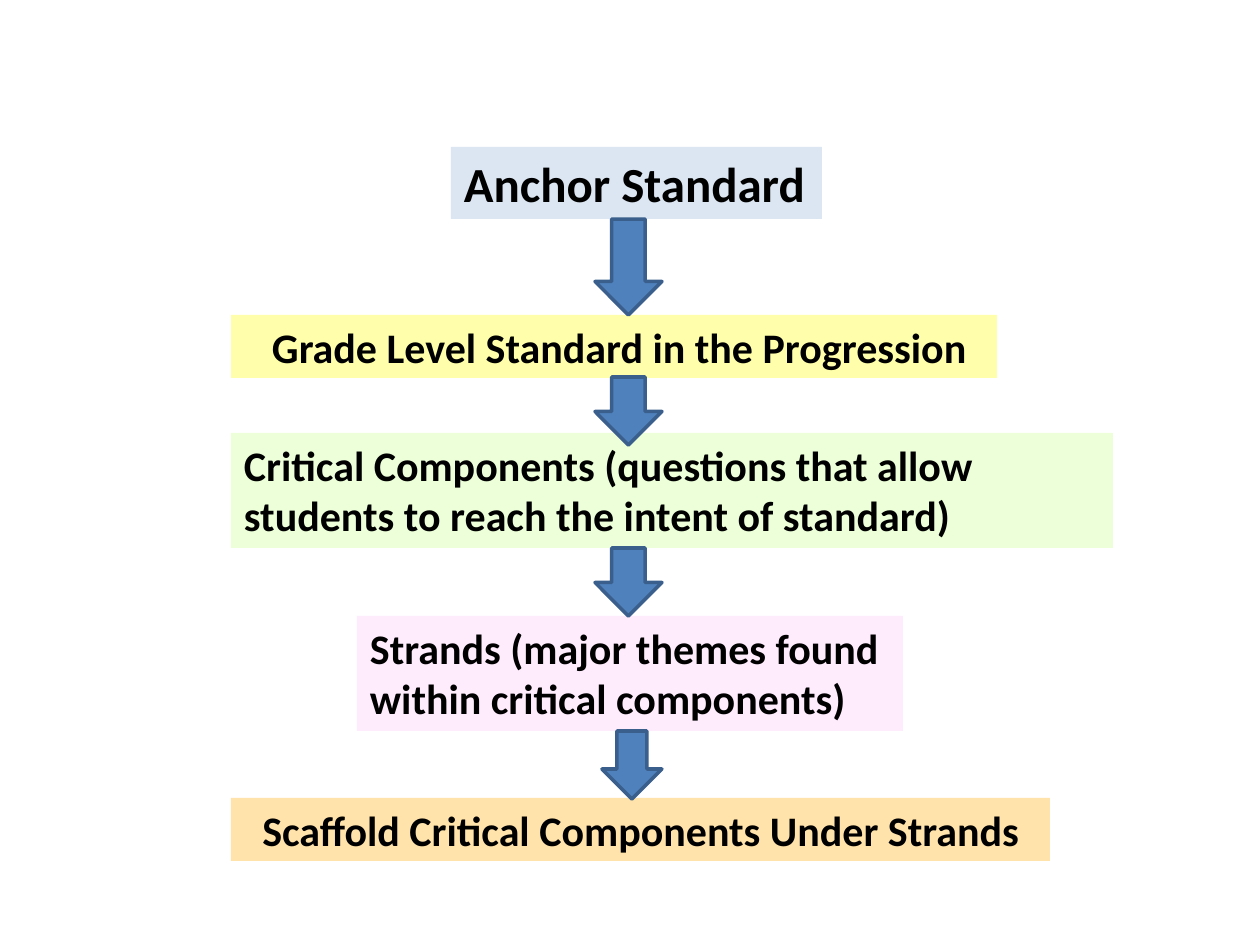
from pptx import Presentation
from pptx.dml.color import RGBColor
from pptx.enum.shapes import MSO_SHAPE as Shape
from pptx.enum.text import MSO_AUTO_SIZE as AutoSize, PP_ALIGN as Align
from pptx.util import Emu, Pt

PX = 914400 // 126
BLANK_LAYOUT = 6
INSET = 13

# paragraphs, (left, top, width, height), fill, text size, alignment, left inset
STEPS = [
    (["Anchor Standard"], (451, 147, 371, 72), "DCE6F2", 28, Align.LEFT, INSET),
    (["Grade Level Standard in the Progression"],
     (231, 315, 766, 63), "FFFFAB", 24, Align.LEFT, 41),
    (["Critical Components (questions that allow students to reach the intent of standard)"],
     (231, 433, 882, 115), "ECFFD9", 24, Align.LEFT, INSET),
    (["Strands (major themes found", "within critical components)"],
     (357, 616, 546, 115), "FEECFC", 24, Align.LEFT, INSET),
    (["Scaffold Critical Components Under Strands"],
     (231, 798, 819, 63), "FFE3AB", 24, Align.CENTER, INSET),
]
ARROW_RIGHT = 662
ARROWS = [(219, 67, 96), (377, 67, 68), (548, 67, 68), (731, 60, 68)]  # top, width, height


def px(*lengths):
    return [Emu(length * PX) for length in lengths]


def color(hex_text):
    return RGBColor.from_string(hex_text)


def add_step(page, lines, place, fill, size, align, inset):
    box = page.shapes.add_textbox(*px(*place))
    box.fill.solid()
    box.fill.fore_color.rgb = color(fill)
    frame = box.text_frame
    frame.word_wrap = True
    frame.auto_size = AutoSize.SHAPE_TO_FIT_TEXT
    frame.margin_left = px(inset)[0]
    frame.text = "\n".join(lines)
    for para in frame.paragraphs:
        para.alignment = align
        para.font.name = "Calibri"
        para.font.size = Pt(size)
        para.font.bold = True
        para.font.color.rgb = color("000000")
    return box


def add_arrow(page, top, width, height):
    arrow = page.shapes.add_shape(
        Shape.DOWN_ARROW, *px(ARROW_RIGHT - width, top, width, height))
    arrow.shadow.inherit = False
    arrow.fill.solid()
    arrow.fill.fore_color.rgb = color("4F81BD")
    arrow.line.color.rgb = color("3A5F8C")
    arrow.line.width = Pt(2)


def main():
    deck = Presentation()
    deck.slide_width, deck.slide_height = px(1260, 945)
    page = deck.slides.add_slide(deck.slide_layouts[BLANK_LAYOUT])
    boxes = [add_step(page, *step) for step in STEPS]
    boxes[0].text_frame.word_wrap = False
    for arrow in ARROWS:
        add_arrow(page, *arrow)
    deck.save("out.pptx")


if __name__ == "__main__":
    main()
